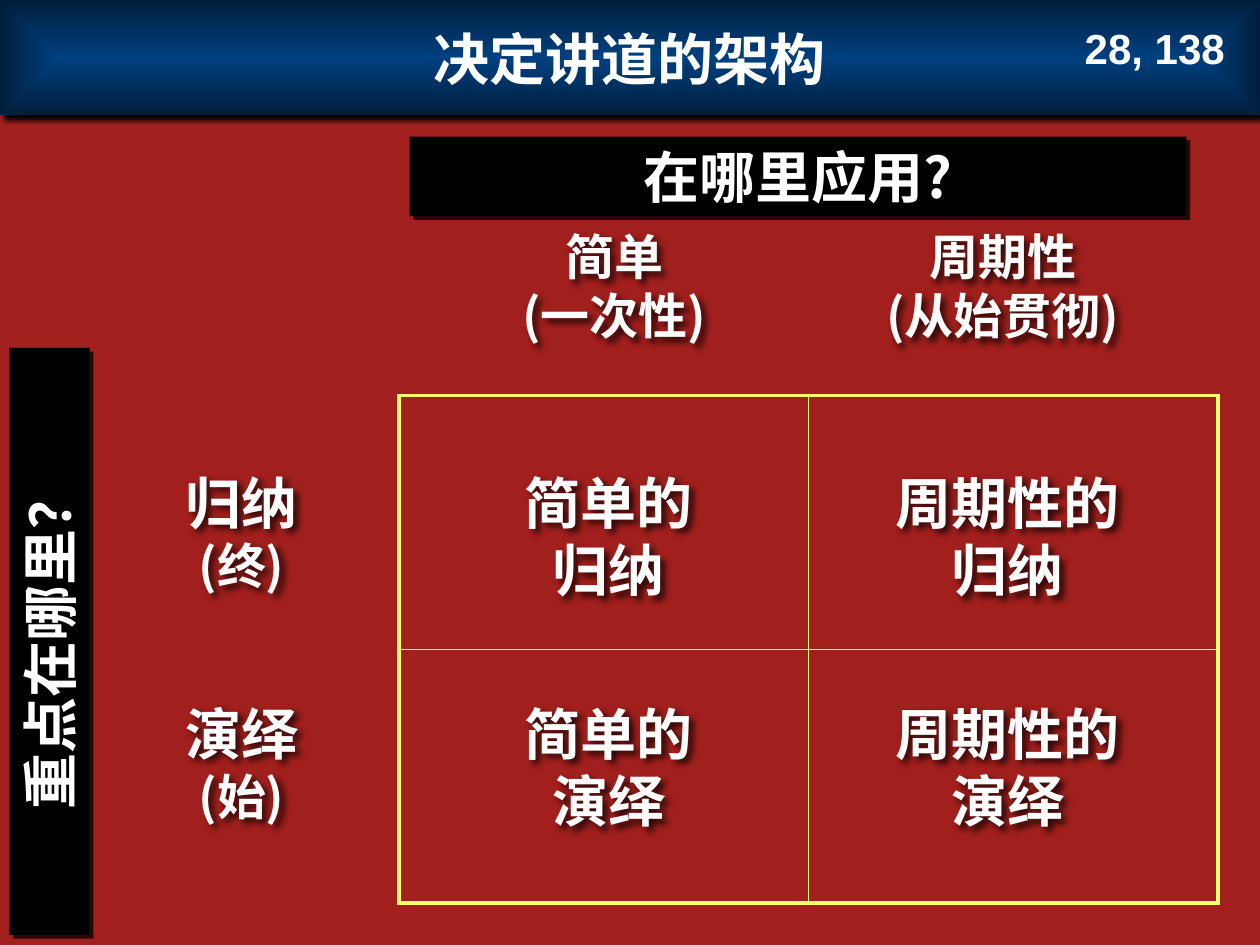
from lxml.etree import SubElement
from pptx import Presentation
from pptx.dml.color import RGBColor
from pptx.enum.shapes import MSO_SHAPE as Shape
from pptx.enum.text import MSO_ANCHOR as Anchor, MSO_AUTO_SIZE as AutoSize, PP_ALIGN as Align
from pptx.oxml.ns import qn
from pptx.util import Pt

CJK = "Noto Sans CJK SC"
WHITE, BLACK, RED, YELLOW = "FFFFFF", "000000", "A11F1C", "FFFF66"
NAVY, DARK_NAVY = "004080", "001E3B"


def colour(value):
    return RGBColor.from_string(value)


def place(item, box):
    item.left, item.top, item.width, item.height = map(Pt, box)


def add_colour(parent, value, alpha=100):
    tint = SubElement(parent, qn("a:srgbClr"), val=value)
    if alpha < 100:
        SubElement(tint, qn("a:alpha"), val=str(alpha * 1000))


def cast_shadow(item, alpha, blur):
    item.shadow.inherit = False
    effects = item._element.spPr.find(qn("a:effectLst"))
    shadow = SubElement(effects, qn("a:outerShdw"), blurRad=str(Pt(blur)),
                        dist=str(Pt(3)), dir="2700000", algn="ctr", rotWithShape="0")
    add_colour(shadow, BLACK, alpha)


def write(item, lines, sizes, font=CJK, align=Align.CENTER, anchor=Anchor.TOP):
    """Fill a frame with lines; sizes apply to the successive runs of each line."""
    frame = item.text_frame
    frame.word_wrap = True
    frame.auto_size = AutoSize.NONE
    frame.vertical_anchor = anchor
    frame.text = lines[0]
    for line in lines[1:]:
        frame.add_paragraph().text = line
    for paragraph in frame.paragraphs:
        paragraph.alignment = align
        for run, size in zip(paragraph.runs, sizes):
            run.font.size = Pt(size)
            run.font.bold = True
            run.font.name = font
            run.font.color.rgb = colour(WHITE)
            SubElement(run.font._element, qn("a:ea"), typeface=font)


def add_title(slide, text):
    title = slide.shapes.title
    place(title, (0, 0, 720, 66))
    gradient = SubElement(title._element.spPr, qn("a:gradFill"), rotWithShape="1")
    stops = SubElement(gradient, qn("a:gsLst"))
    for position, value in ((0, NAVY), (100, DARK_NAVY)):
        add_colour(SubElement(stops, qn("a:gs"), pos=str(position * 1000)), value)
    focus = SubElement(gradient, qn("a:path"), {"path": "shape"})
    SubElement(focus, qn("a:fillToRect"), dict.fromkeys("ltrb", "50000"))
    cast_shadow(title, 100, 3)
    write(title, [text], [32], anchor=Anchor.MIDDLE)


def add_question(slide, text, box, rotation=0):
    bar = slide.shapes.add_shape(Shape.RECTANGLE, *map(Pt, box))
    bar.rotation = rotation
    bar.fill.solid()
    bar.fill.fore_color.rgb = colour(BLACK)
    bar.line.fill.background()
    cast_shadow(bar, 75, 0)
    write(bar, [text], [32])


def add_label(slide, lines, box, sizes):
    label = slide.shapes.add_textbox(*map(Pt, box))
    cast_shadow(label, 75, 4)
    write(label, lines, sizes)


def add_matrix(slide, box, count=2):
    """Square table with a thick outer frame and thin inner lines."""
    graphic = slide.shapes.add_table(count, count, *map(Pt, box))
    matrix = graphic.table
    matrix.first_row = matrix.horz_banding = False
    last = count - 1
    for row in range(count):
        for column in range(count):
            cell = matrix.cell(row, column)
            properties = cell._tc.get_or_add_tcPr()
            outer_edges = {"L": column == 0, "R": column == last,
                           "T": row == 0, "B": row == last}
            for side, outer in outer_edges.items():
                border = SubElement(properties, qn("a:ln" + side),
                                    w=str(Pt(2.25 if outer else 1)))
                add_colour(SubElement(border, qn("a:solidFill")), YELLOW)
            cell.fill.background()


def main():
    deck = Presentation()
    deck.slide_width, deck.slide_height = Pt(720), Pt(540)
    slide = deck.slides.add_slide(deck.slide_layouts[5])
    slide.background.fill.solid()
    slide.background.fill.fore_color.rgb = colour(RED)

    add_title(slide, "决定讲道的架构")
    add_question(slide, "在哪里应用?", (234, 78, 444, 45.5))
    pages = slide.shapes.add_textbox(Pt(600), Pt(9.5), Pt(107), Pt(36.5))
    write(pages, ["28, 138"], [24], font="Arial", align=Align.RIGHT)
    add_question(slide, "重点在哪里？", (-139.5, 343.5, 335.5, 46), rotation=270)

    add_label(slide, ["简单", "(一次性)"], (222, 126, 258, 75), [28])
    add_label(slide, ["周期性", "(从始贯彻)"], (420, 126, 306, 75), [28])

    add_matrix(slide, (228, 226, 468, 290))
    rows = (
        (264, "归纳\v(终)", ["简单的", "归纳"], ["周期性的归纳"]),
        (396, "演绎\v(始)", ["简单的", "演绎"], ["周期性的演绎"]),
    )
    for top, heading, simple, recurring in rows:
        add_label(slide, [heading], (54, top, 168, 80), [32, 28])
        add_label(slide, simple, (264, top, 168, 85), [32])
        add_label(slide, recurring, (492, top, 168, 85), [32])

    deck.save("out.pptx")


if __name__ == "__main__":
    main()
